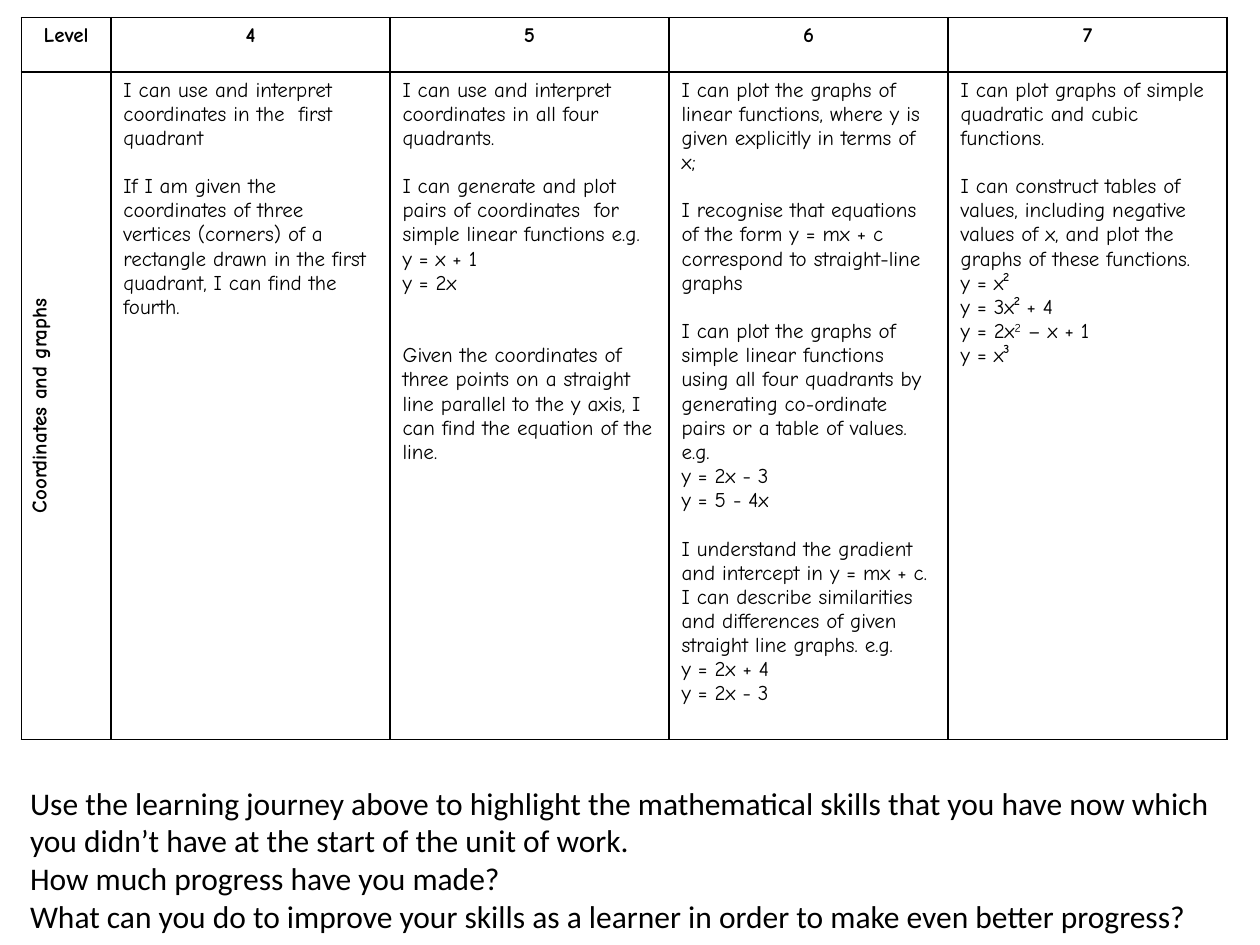
"""Build a learning journey slide for coordinates and graphs."""
from lxml.etree import SubElement
from pptx import Presentation
from pptx.dml.color import RGBColor
from pptx.enum.text import PP_ALIGN as Align
from pptx.oxml.ns import qn
from pptx.util import Inches, Pt

BLACK = RGBColor(0, 0, 0)
LINE = 13.8
HEADS = ["Level", "4", "5", "6", "7"]
TOPIC = "Coordinates and graphs"
SKILLS = [
    [(0, "I can use and interpret coordinates in the  first quadrant"),
     (1, "If I am given the coordinates of three vertices (corners) of a rectangle "
         "drawn in the first quadrant, I can find the fourth.")],
    [(0, "I can use and interpret coordinates in all four quadrants."),
     (1, "I can generate and plot pairs of coordinates  for simple linear functions e.g."),
     (0, "y = x + 1"),
     (0, "y = 2x"),
     (2, "Given the coordinates of three points on a straight line parallel to the "
         "y axis, I can find the equation of the line.")],
    [(0, "I can plot the graphs of linear functions, where y is given explicitly "
         "in terms of x;"),
     (1, "I recognise that equations of the form y = mx + c correspond to "
         "straight-line graphs"),
     (1, "I can plot the graphs of simple linear functions using all four quadrants "
         "by generating co-ordinate pairs or a table of values.  e.g."),
     (0, "y = 2x - 3"),
     (0, "y = 5 - 4x"),
     (1, "I understand the gradient and intercept in y = mx + c. I can describe "
         "similarities and differences of given straight line graphs. e.g."),
     (0, "y = 2x + 4"),
     (0, "y = 2x - 3")],
    [(0, "I can plot graphs of simple quadratic and cubic functions."),
     (1, "I can construct tables of values, including negative values of x, and "
         "plot the graphs of these functions."),
     (0, "y = x²"),
     (0, "y = 3x² + 4"),
     (0, "y = 2x^2^ – x + 1"),
     (0, "y = x³")],
]
TASKS = [
    (0, "Use the learning journey above to highlight the mathematical skills that you "
        "have now which you didn’t have at the start of the unit of work."),
    (0, "How much progress have you made?"),
    (0, "What can you do to improve your skills as a learner in order to make even "
        "better progress?"),
]
WIDTHS = [0.71] + [2.215] * 4
HEIGHTS = [0.43, 5.3]
BODY = {"name": "Comic Neue", "size": Pt(12), "bold": False}
HEAD = {**BODY, "bold": True}
NOTE = {"name": "Calibri", "size": Pt(18)}


def write(frame, paras, style, align=Align.LEFT):
    """Fill a frame; each paragraph gives its gap in lines and its text."""
    for i, (gap, text) in enumerate(paras):
        para = frame.add_paragraph() if i else frame.paragraphs[0]
        para.alignment = align
        para.space_before = Pt(gap * LINE)
        for j, part in enumerate(text.split("^")):
            run = para.add_run()
            run.text = part
            for key, value in style.items():
                setattr(run.font, key, value)
            run.font.color.rgb = BLACK
            if j % 2:
                run.font._element.set("baseline", "30000")


def border(cell):
    """Rule all four sides of a cell and clear its fill."""
    props = cell._tc.get_or_add_tcPr()
    for side in ("lnL", "lnR", "lnT", "lnB"):
        line = SubElement(props, qn(f"a:{side}"), w=str(Pt(1)))
        fill = SubElement(line, qn("a:solidFill"))
        SubElement(fill, qn("a:srgbClr"), val=str(BLACK))
    cell.fill.background()


def main():
    deck = Presentation()
    deck.slide_width, deck.slide_height = Inches(10), Inches(7.5)
    slide = deck.slides.add_slide(deck.slide_layouts[6])

    box = slide.shapes.add_textbox(Inches(0.14), Inches(6.17), Inches(9.76), Inches(1.31))
    box.text_frame.word_wrap = True
    write(box.text_frame, TASKS, NOTE)

    grid = slide.shapes.add_table(2, len(HEADS), Inches(0.17), Inches(0.14),
                                  Inches(sum(WIDTHS)), Inches(sum(HEIGHTS))).table
    for col, width in zip(grid.columns, WIDTHS):
        col.width = Inches(width)
    for row, height in zip(grid.rows, HEIGHTS):
        row.height = Inches(height)
    for cell in grid.iter_cells():
        border(cell)
    for i, head in enumerate(HEADS):
        write(grid.cell(0, i).text_frame, [(0, head)], HEAD, Align.CENTER)
    topic = grid.cell(1, 0)
    topic._tc.get_or_add_tcPr().set("vert", "vert270")
    write(topic.text_frame, [(0, TOPIC)], HEAD, Align.CENTER)
    for i, paras in enumerate(SKILLS, 1):
        write(grid.cell(1, i).text_frame, paras, BODY)

    deck.save("out.pptx")


if __name__ == "__main__":
    main()
